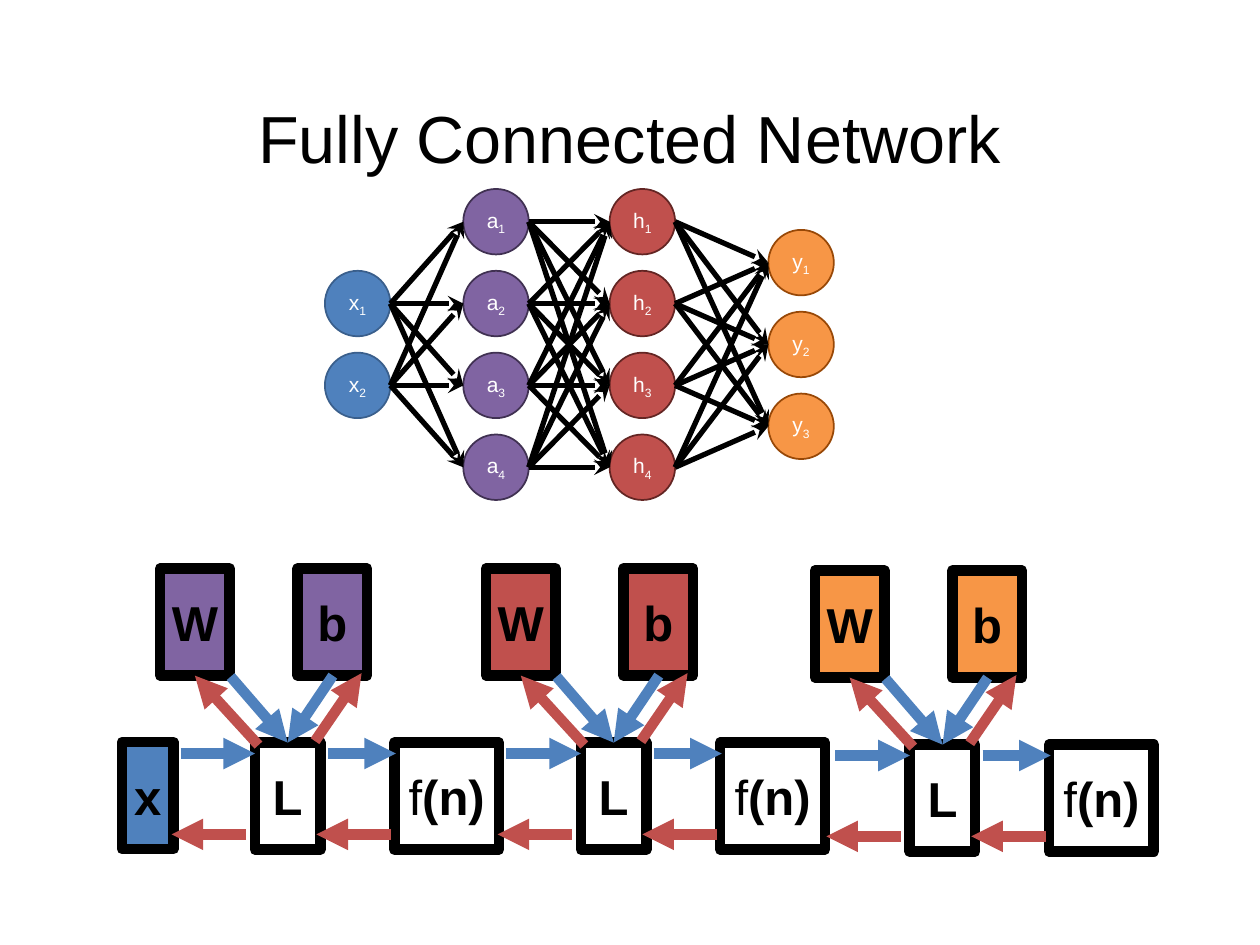
from dataclasses import dataclass
from itertools import pairwise, product

from lxml.etree import SubElement
from pptx import Presentation
from pptx.dml.color import RGBColor
from pptx.enum.shapes import MSO_CONNECTOR as Link, MSO_SHAPE as Shape
from pptx.enum.text import MSO_ANCHOR as Anchor, PP_ALIGN as Align
from pptx.oxml.ns import qn
from pptx.util import Cm, Pt


@dataclass(frozen=True)
class Theme:
    font: str = "Arial"
    black: str = "000000"
    white: str = "FFFFFF"
    blue: str = "4F81BD"
    purple: str = "8064A2"
    red: str = "C0504D"
    orange: str = "F79646"
    blue_edge: str = "3A5F8C"
    purple_edge: str = "403152"
    red_edge: str = "632523"
    orange_edge: str = "984807"
    title_size: int = 38
    block_size: int = 28
    node_size: int = 12


THEME = Theme()
TOP, BOTTOM = 0, 2
BLOCK_HEIGHT = 2.16


def color(code):
    return RGBColor.from_string(code)


def write(frame, parts, size, ink):
    frame.margin_left = frame.margin_right = 0
    frame.margin_top = frame.margin_bottom = 0
    frame.vertical_anchor = Anchor.MIDDLE
    para = frame.paragraphs[0]
    para.alignment = Align.CENTER
    spans = []
    for part in parts:
        span = para.add_run()
        span.text = part
        span.font.name = THEME.font
        span.font.size = Pt(size)
        span.font.color.rgb = color(ink)
        spans.append(span)
    return spans


def add_solid(shapes, kind, box, fill, edge, edge_width):
    solid = shapes.add_shape(kind, *map(Cm, box))
    solid.shadow.inherit = False
    solid.fill.solid()
    solid.fill.fore_color.rgb = color(fill)
    solid.line.color.rgb = color(edge)
    solid.line.width = Pt(edge_width)
    solid.text_frame.word_wrap = False
    return solid


def add_arrow(shapes, start, end, ink, width, head):
    arrow = shapes.add_connector(Link.STRAIGHT, *map(Cm, (*start, *end)))
    arrow.line.color.rgb = color(ink)
    arrow.line.width = Pt(width)
    SubElement(arrow.line._get_or_add_ln(), qn("a:tailEnd"), type=head)
    SubElement(arrow._element.spPr, qn("a:effectLst"))
    return arrow


def add_block(shapes, left, top, width, fill, plain="", bold=""):
    box = (left, top, width, BLOCK_HEIGHT)
    block = add_solid(shapes, Shape.RECTANGLE, box, fill, THEME.black, 6)
    parts = [part for part in (plain, bold) if part]
    spans = write(block.text_frame, parts, THEME.block_size, THEME.black)
    spans[-1].font.bold = True
    return block


def add_node(shapes, left, top, size, letter, number, fill, edge):
    node = add_solid(shapes, Shape.OVAL, (left, top, size, size), fill, edge, 1)
    spans = write(node.text_frame, (letter, str(number)), THEME.node_size, THEME.white)
    spans[1]._r.get_or_add_rPr().set("baseline", "-25000")


def add_title(page, left, top, width, height):
    frame = page.shapes.add_textbox(*map(Cm, (left, top, width, height))).text_frame
    frame.word_wrap = True
    write(frame, ["Fully Connected Network"], THEME.title_size, THEME.black)
    frame.paragraphs[0].line_spacing = 0.9


def add_network(page, left, top):
    size, pitch, tallest = 1.32, 1.65, 4
    layers = (
        ("x", 2, 0, THEME.blue, THEME.blue_edge),
        ("a", 4, 2.79, THEME.purple, THEME.purple_edge),
        ("h", 4, 5.74, THEME.red, THEME.red_edge),
        ("y", 3, 8.94, THEME.orange, THEME.orange_edge),
    )
    shapes = page.shapes.add_group_shape().shapes
    columns = []
    for letter, count, offset, fill, edge in layers:
        first = top + (tallest - count) / 2 * pitch
        tops = [first + row * pitch for row in range(count)]
        for number, node_top in enumerate(tops, 1):
            add_node(shapes, left + offset, node_top, size, letter, number, fill, edge)
        columns.append((left + offset, [node_top + size / 2 for node_top in tops]))
    for (source, starts), (target, ends) in pairwise(columns):
        for start, end in product(starts, ends):
            add_arrow(shapes, (source + size, start), (target, end),
                      THEME.black, 3, "stealth")


def add_stage(page, left, top, fill):
    shapes = page.shapes.add_group_shape().shapes
    weight = add_block(shapes, left, top, 1.4, fill, bold="W")
    add_block(shapes, left + 2.77, top, 1.4, fill, bold="b")
    layer = add_block(shapes, left + 1.91, top + 3.51, 1.32, THEME.white, bold="L")
    add_block(shapes, left + 4.72, top + 3.51, 2.11, THEME.white, "f", "(n)")

    def flow(start, end, ink):
        points = [(left + across, top + down) for across, down in (start, end)]
        return add_arrow(shapes, *points, ink, 6, "triangle")

    forward, backward = 3.73, 5.36
    flow((0.41, forward), (1.91, forward), THEME.blue)
    flow((3.38, forward), (4.75, forward), THEME.blue)
    flow((1.73, backward), (0.23, backward), THEME.red)
    flow((4.65, backward), (3.15, backward), THEME.red)
    for start in ((1.42, 2.18), (3.48, 2.16)):
        flow(start, (2.57, 3.51), THEME.blue).end_connect(layer, TOP)
    flow((3.12, 3.48), (4.06, 2.11), THEME.red)
    flow((1.98, 3.56), (0.7, 2.16), THEME.red).end_connect(weight, BOTTOM)


def main():
    deck = Presentation()
    deck.slide_width, deck.slide_height = Cm(25.4), Cm(19.05)
    page = deck.slides.add_slide(deck.slide_layouts[6])
    add_title(page, 1.75, 1.02, 21.9, 3.68)
    add_network(page, 6.55, 3.81)
    add_block(page.shapes, 2.46, 14.96, 1.04, THEME.blue, bold="x")
    for left, top, fill in (
        (3.23, 11.46, THEME.purple),
        (9.8, 11.46, THEME.red),
        (16.43, 11.5, THEME.orange),
    ):
        add_stage(page, left, top, fill)
    deck.save("out.pptx")


if __name__ == "__main__":
    main()
